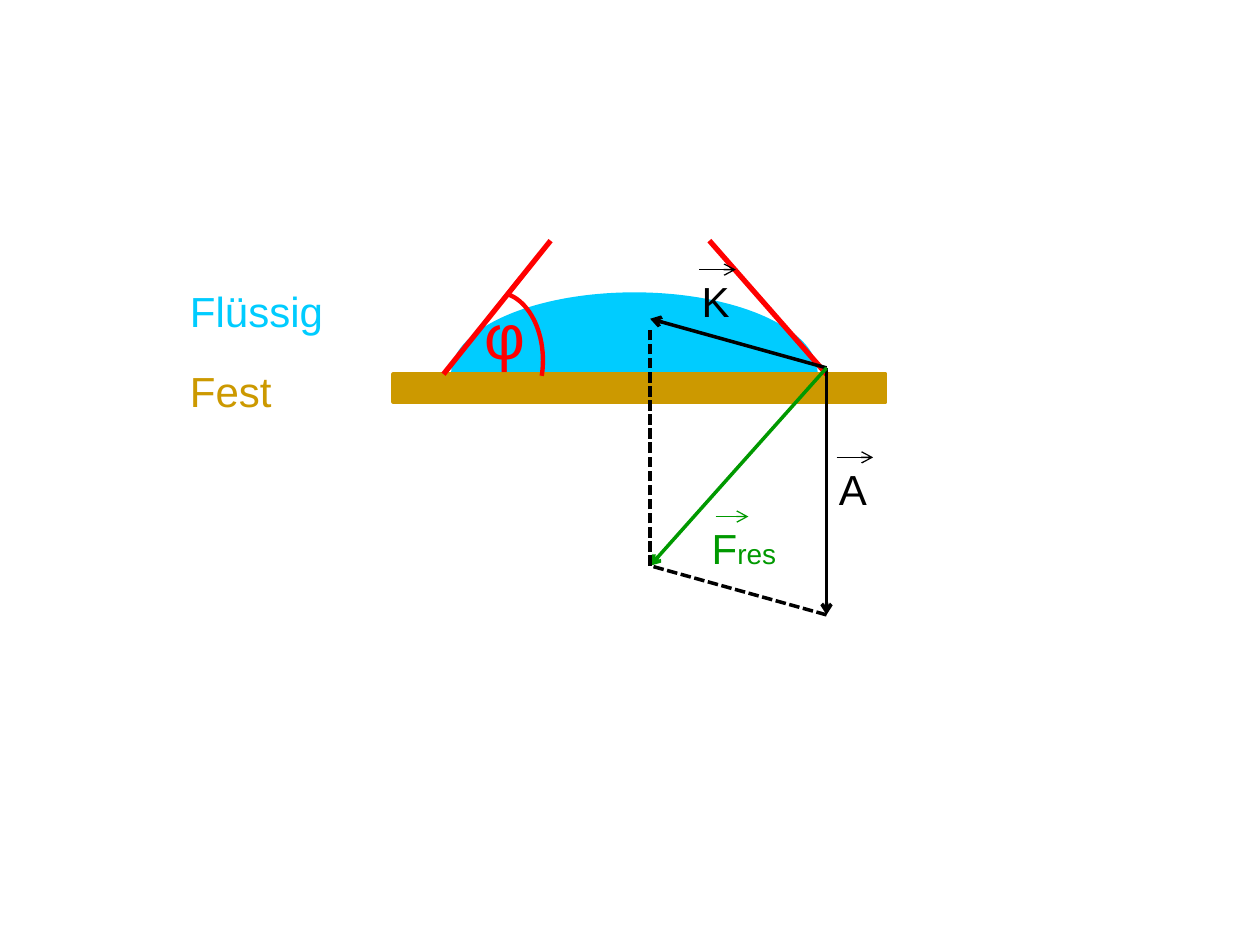
from dataclasses import dataclass

from lxml import etree
from pptx import Presentation
from pptx import util as u
from pptx.dml.color import RGBColor
from pptx.enum import dml, shapes, text
from pptx.oxml.ns import qn


@dataclass(frozen=True)
class Theme:
    liquid: str = "00CCFF"
    solid: str = "CC9900"
    tangent: str = "FF0000"
    force: str = "000000"
    result: str = "009900"
    paper: str = "FFFFFF"
    font: str = "Arial"
    angle_pt: int = 36
    label_pt: int = 24
    index_pt: int = 16
    thin: float = 0.75
    medium: float = 2
    arc: float = 2.5
    thick: float = 3


def add_run(p, content, *, font, size, color):
    r = p.add_run()
    r.text = content
    r.font.name = font
    r.font.size = u.Pt(size)
    r.font.color.rgb = RGBColor.from_string(color)


class Diagram:
    """Holds the theme and the slide; drawing methods accept a group as target."""

    def __init__(self, s, theme):
        self.s = s
        self.theme = theme

    def group(self):
        return self.s.shapes.add_group_shape()

    def shape(self, kind, box, fill=None, line=None, width=2, target=None):
        sp = (target or self.s).shapes.add_shape(kind, *map(u.Inches, box))
        sp.shadow.inherit = False
        if fill:
            sp.fill.solid()
            sp.fill.fore_color.rgb = RGBColor.from_string(fill)
        else:
            sp.fill.background()
        if line:
            sp.line.color.rgb = RGBColor.from_string(line)
            sp.line.width = u.Pt(width)
        else:
            sp.line.fill.background()
        return sp

    def line(self, start, end, color, width, dashed=False, arrow=False, target=None):
        cn = (target or self.s).shapes.add_connector(
            shapes.MSO_CONNECTOR.STRAIGHT, *map(u.Inches, (*start, *end)))
        cn.line.color.rgb = RGBColor.from_string(color)
        cn.line.width = u.Pt(width)
        if dashed:
            cn.line.dash_style = dml.MSO_LINE.SQUARE_DOT
        if arrow:
            etree.SubElement(cn.line._get_or_add_ln(), qn("a:tailEnd"), type="arrow")
        etree.SubElement(cn._element.spPr, qn("a:effectLst"))

    def label(self, content, box, color, size=None, index="", wrap=True, target=None):
        t = self.theme
        tf = (target or self.s).shapes.add_textbox(*map(u.Inches, box)).text_frame
        tf.word_wrap = wrap
        tf.auto_size = text.MSO_AUTO_SIZE.SHAPE_TO_FIT_TEXT
        p = tf.paragraphs[0]
        add_run(p, content, font=t.font, size=size or t.label_pt, color=color)
        if index:
            add_run(p, index, font=t.font, size=t.index_pt, color=color)

    def vector_label(self, content, box, arrow_x, arrow_length, color, index=""):
        """Label with a small vector arrow along the top of its box."""
        grp = self.group()
        self.label(content, box, color, index=index, target=grp)
        y = box[1]
        self.line((arrow_x, y), (arrow_x + arrow_length, y), color,
                  self.theme.thin, arrow=True, target=grp)


def main():
    prs = Presentation()
    prs.slide_width, prs.slide_height = u.Inches(10), u.Inches(7.5)
    t = Theme()
    d = Diagram(prs.slides.add_slide(prs.slide_layouts[6]), t)
    kind = shapes.MSO_SHAPE

    surface_y, tangent_y = 2.97, 1.91
    contact = (6.56, 2.92)
    cohesion_tip = (5.16, 2.53)
    adhesion_tip = (6.56, 4.88)
    result_tip = (5.16, 4.49)

    # The white rectangle cuts the ellipse down to a drop on the surface
    d.shape(kind.OVAL, (3.58, 2.32, 2.91, 1.29), t.liquid)
    d.shape(kind.RECTANGLE, (3.31, surface_y, 3.27, 0.97), t.paper)
    d.shape(kind.RECTANGLE, (3.12, surface_y, 3.91, 0.22), t.solid, t.solid, t.medium)
    d.line((6.56, surface_y), (5.63, tangent_y), t.tangent, t.thick)

    angle = d.group()
    arc = d.shape(kind.ARC, (3.58, 2.32, 0.73, 1.08), line=t.tangent,
                  width=t.arc, target=angle)
    arc.adjustments[0], arc.adjustments[1] = 168.13, 11.44
    d.line((3.52, surface_y), (4.37, tangent_y), t.tangent, t.thick, target=angle)
    d.label("φ", (3.75, 2.3, 0.55, 0.71), t.tangent, t.angle_pt, target=angle)

    d.line(adhesion_tip, result_tip, t.force, t.medium, dashed=True)
    for tip, color in ((cohesion_tip, t.force), (adhesion_tip, t.force),
                       (result_tip, t.result)):
        d.line(contact, tip, color, t.medium, arrow=True)
    d.line(result_tip, (5.16, 2.61), t.force, t.medium, dashed=True)

    d.vector_label("K", (5.47, 2.14, 0.7, 0.47), 5.55, 0.29, t.force)
    d.vector_label("A", (6.56, 3.63, 0.7, 0.5), 6.64, 0.29, t.force)
    d.vector_label("F", (5.55, 4.1, 1.17, 0.5), 5.68, 0.26, t.result, index="res")

    d.label("Flüssig", (1.41, 2.22, 1.27, 0.5), t.liquid, wrap=False)
    d.label("Fest", (1.41, 2.85, 0.86, 0.5), t.solid, wrap=False)

    prs.save("out.pptx")


if __name__ == "__main__":
    main()
